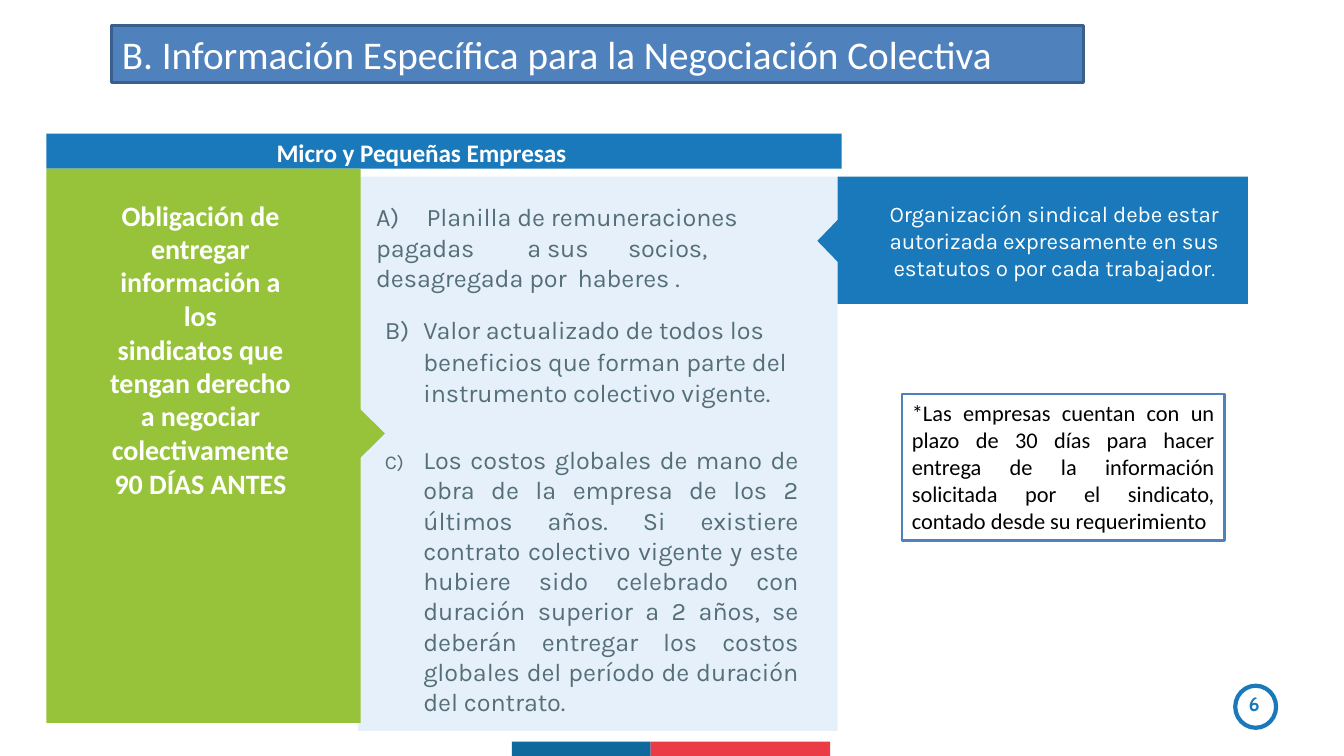
from pptx import Presentation
from pptx.dml.color import RGBColor
from pptx.enum.shapes import MSO_SHAPE
from pptx.enum.text import MSO_ANCHOR, MSO_AUTO_SIZE, PP_ALIGN
from pptx.oxml import parse_xml
from pptx.oxml.ns import nsdecls
from pptx.util import Cm, Pt

RECT, DIAMOND, OVAL = MSO_SHAPE.RECTANGLE, MSO_SHAPE.DIAMOND, MSO_SHAPE.OVAL
LEFT, CENTER, JUSTIFY = PP_ALIGN.LEFT, PP_ALIGN.CENTER, PP_ALIGN.JUSTIFY
TOP, GROW = MSO_ANCHOR.TOP, MSO_AUTO_SIZE.SHAPE_TO_FIT_TEXT

COLORS = {
    "white": "FFFFFF", "black": "000000", "slate": "556F79",
    "blue": "1979BA", "green": "97C33A", "pale": "E6F0FA",
    "flag_blue": "0F699C", "flag_red": "EB3C46",
    "title": "4F81BD", "title_edge": "3A5F8C",
}

prs = Presentation()
prs.slide_width, prs.slide_height = Cm(33.87), Cm(19.05)
slide = prs.slides.add_slide(prs.slide_layouts[6])


def block(kind, box, fill=None, line=None, width=2):
    shape = slide.shapes.add_shape(kind, *map(Cm, box))
    shape.shadow.inherit = False
    if fill:
        shape.fill.solid()
        shape.fill.fore_color.rgb = RGBColor.from_string(COLORS[fill])
    else:
        shape.fill.background()
    if line:
        shape.line.color.rgb = RGBColor.from_string(COLORS[line])
        shape.line.width = Pt(width)
    else:
        shape.line.fill.background()
    return shape


def write(shape, paragraphs, font, size, color, bold=False, align=LEFT, margins=(0, 0, 0, 0),
          indent=(0, 0), tab=None, line_spacing=None, before=0, spacing=0):
    """Each paragraph is a list of (text, size) runs; size None means the common size."""
    frame = shape.text_frame
    frame.word_wrap, frame.auto_size, frame.vertical_anchor = True, GROW, TOP
    (frame.margin_left, frame.margin_top,
     frame.margin_right, frame.margin_bottom) = map(Cm, margins)
    for i, runs in enumerate(paragraphs):
        p = frame.paragraphs[0] if i == 0 else frame.add_paragraph()
        p.alignment, p.space_before = align, Pt(before)
        if line_spacing:
            p.line_spacing = line_spacing
        properties = p._p.get_or_add_pPr()
        properties.set("marL", str(Cm(indent[0])))
        properties.set("indent", str(Cm(indent[1])))
        if tab:
            properties.append(parse_xml(
                f'<a:tabLst {nsdecls("a")}><a:tab pos="{Cm(tab)}" algn="l"/></a:tabLst>'))
        for text, own_size in runs:
            run = p.add_run()
            run.text = text
            run.font.name, run.font.size, run.font.bold = font, Pt(own_size or size), bold
            run.font.color.rgb = RGBColor.from_string(COLORS[color])
            run._r.get_or_add_rPr().set("spc", str(spacing))


# Two-coloured strip at the bottom edge
block(RECT, (12.9, 18.69, 3.5, 0.36), "flag_blue")
block(RECT, (16.4, 18.69, 4.52, 0.36), "flag_red")

# Company size header
company_size = block(RECT, (1.17, 3.37, 20.04, 0.88), "blue")
write(company_size, [[("Micro y Pequeñas Empresas", None)]], "Calibri", 18, "white", bold=True,
      margins=(0, 0.1, 0, 0), indent=(5.8, 0), before=3, spacing=-5)

# Panels and their pointers
block(RECT, (9.02, 4.45, 12.09, 13.97), "pale")
block(RECT, (21.11, 4.45, 10.34, 3.21), "blue")
block(RECT, (1.17, 4.25, 7.92, 13.97), "green")
block(DIAMOND, (8.46, 10.31, 1.24, 1.23), "green")
block(DIAMOND, (20.6, 5.45, 1.2, 1.24), "blue")

# Information to be handed over
hanging = (0.99, -0.97)
items = [
    ((9.45, 5.08, 11.23, 2.31),
     [("A)\tPlanilla de remuneraciones pagadas \ta sus \tsocios, "
       "desagregada por \thaberes .", None)],
     dict(indent=(0.03, 0), tab=0.99)),
    ((9.68, 7.9, 10.41, 2.41),
     [("B)\tValor actualizado de todos los beneficios que forman parte del "
       "instrumento colectivo vigente.", None)],
     dict(indent=hanging, tab=0.99, line_spacing=1.04)),
    ((9.68, 11.2, 10.44, 6.15),
     [("C)\t", 14),
      ("Los costos globales de mano de obra de la empresa de los 2 últimos años. "
       "Si existiere contrato colectivo vigente y este hubiere sido celebrado con "
       "duración superior a 2 años, se deberán entregar los costos globales del "
       "período de duración del contrato.", None)],
     dict(indent=hanging, align=JUSTIFY)),
]
for box, runs, layout in items:
    write(slide.shapes.add_textbox(*map(Cm, box)), [runs], "Karla", 18, "slate",
          spacing=-5, **layout)

# Obligation
obligation = slide.shapes.add_textbox(Cm(2.74), Cm(5.03), Cm(4.62), Cm(7.72))
write(obligation,
      [[("Obligación de entregar información a los", None)],
       [("sindicatos que tengan derecho a negociar colectivamente", None)],
       [("90 DÍAS ANTES", None)]],
      "Calibri", 20, "white", bold=True, align=CENTER, line_spacing=0.99, before=0.7, spacing=-5)

# Authorisation requirement
authorisation = slide.shapes.add_textbox(Cm(22.25), Cm(5.03), Cm(8.64), Cm(2.08))
write(authorisation,
      [[("Organización sindical debe estar autorizada expresamente en sus estatutos "
         "o por cada trabajador", None), (".", 14)]],
      "Karla", 16, "white", align=CENTER, line_spacing=1.01, spacing=-8)

# Page number
block(OVAL, (31.13, 17.28, 1.03, 1.06), line="blue", width=3)
page_number = slide.shapes.add_textbox(Cm(31.27), Cm(17.55), Cm(0.71), Cm(0.56))
write(page_number, [[("6", None)]], "Cabin", 14, "blue", bold=True,
      indent=(0.2, 0), line_spacing=Pt(13.8))

# Title and deadline note
padding = (0.25, 0.13, 0.25, 0.13)
title = block(RECT, (2.82, 0.64, 24.49, 1.45), "title", "title_edge")
write(title, [[("B. Información Específica para la Negociación Colectiva", None)]],
      "Calibri", 28, "white", margins=padding)
deadline = block(RECT, (22.73, 9.93, 8.13, 3.69), "white", "title")
write(deadline,
      [[("*Las empresas cuentan con un plazo de 30 días para hacer entrega de la información "
         "solicitada por el sindicato, contado desde su requerimiento", None)]],
      "Calibri", 16, "black", align=JUSTIFY, margins=padding)

prs.save("out.pptx")
